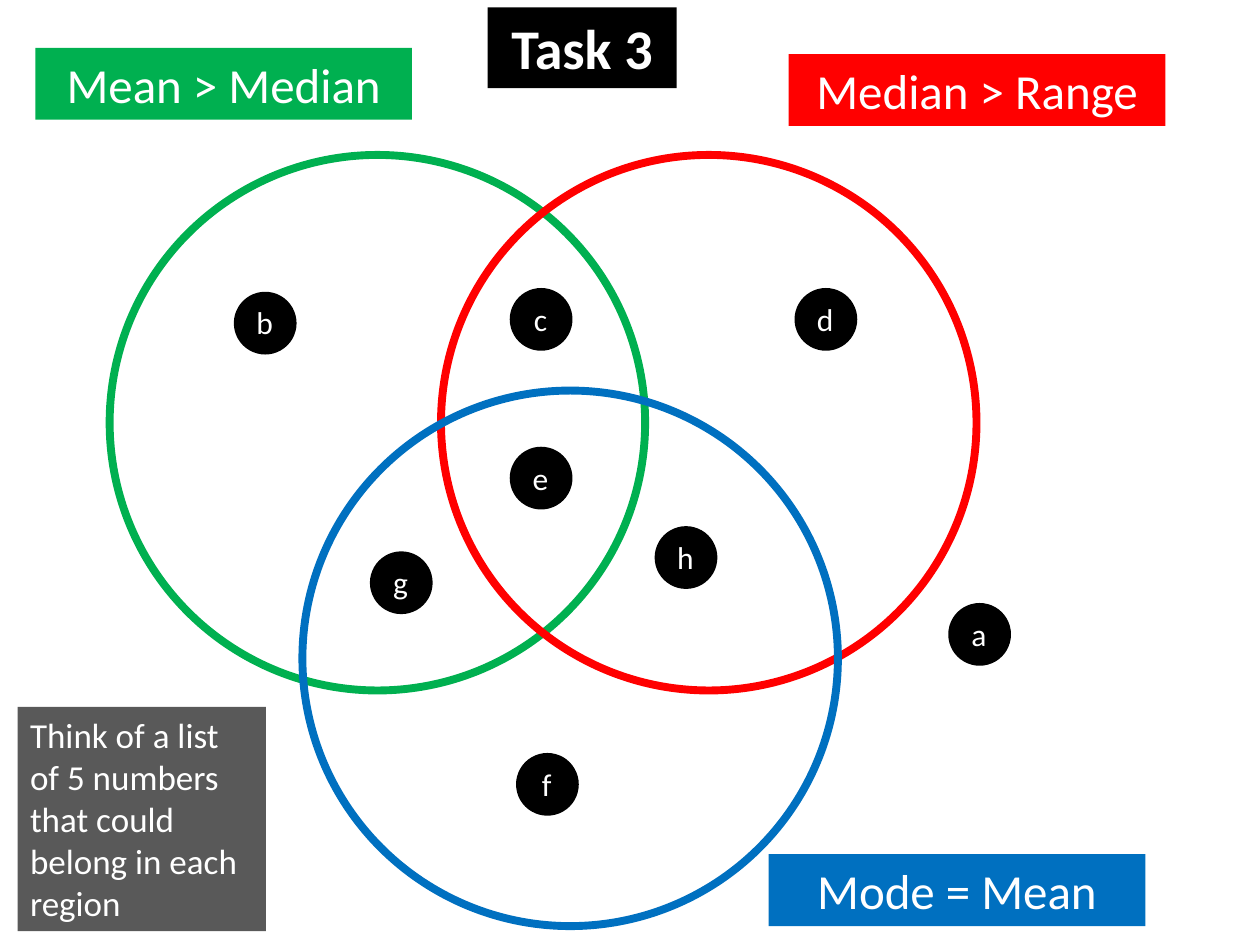
from pptx import Presentation
from pptx.dml.color import RGBColor
from pptx.enum import shapes, text as t
from pptx.util import Inches, Pt

COLORS = {
    "green": "00B050",
    "red": "FF0000",
    "blue": "0070C0",
    "black": "000000",
    "grey": "595959",
    "white": "FFFFFF",
}


def color(name):
    return RGBColor.from_string(COLORS[name])


def add_label(text, left, top, width, height, size, fill=None, bold=False,
              align=t.PP_ALIGN.CENTER):
    box = slide.shapes.add_textbox(
        Inches(left), Inches(top), Inches(width), Inches(height))
    if fill:
        box.fill.solid()
        box.fill.fore_color.rgb = color(fill)
    frame = box.text_frame
    frame.word_wrap = True
    frame.auto_size = t.MSO_AUTO_SIZE.SHAPE_TO_FIT_TEXT
    paragraph = frame.paragraphs[0]
    paragraph.alignment = align
    run = paragraph.add_run()
    run.text = text
    run.font.name = "Calibri"
    run.font.size = Pt(size)
    run.font.bold = bold
    run.font.color.rgb = color("white")


presentation = Presentation()
presentation.slide_width = Inches(10)
presentation.slide_height = Inches(7.5)
slide = presentation.slides.add_slide(presentation.slide_layouts[6])

# Set names
for text, left, top, fill in [
    ("Median > Range", 6.26, 0.43, "red"),
    ("Mode = Mean", 6.1, 6.78, "blue"),
    ("Mean > Median", 0.28, 0.38, "green"),
]:
    add_label(text, left, top, 2.99, 0.57, 28, fill)

# Venn circles
DIAMETER = 4.25
for left, top, line in [
    (0.87, 1.23, "green"),
    (3.5, 1.23, "red"),
    (2.4, 3.1, "blue"),
]:
    circle = slide.shapes.add_shape(
        shapes.MSO_SHAPE.OVAL, Inches(left), Inches(top),
        Inches(DIAMETER), Inches(DIAMETER))
    circle.shadow.inherit = False
    circle.fill.background()
    circle.line.color.rgb = color(line)
    circle.line.width = Pt(4.5)

# Region markers: a dot with its letter on top
DOT = 0.47
for letter, left, top in [
    ("b", 1.87, 2.33),
    ("d", 6.32, 2.3),
    ("f", 4.11, 5.99),
    ("c", 4.06, 2.3),
    ("h", 5.21, 4.19),
    ("g", 2.95, 4.39),
    ("e", 4.06, 3.56),
    ("a", 7.54, 4.8),
]:
    dot = slide.shapes.add_shape(
        shapes.MSO_SHAPE.OVAL, Inches(left), Inches(top),
        Inches(DOT), Inches(DOT))
    dot.shadow.inherit = False
    dot.fill.solid()
    dot.fill.fore_color.rgb = color("black")
    dot.line.color.rgb = color("black")
    dot.line.width = Pt(2)
    add_label(letter, left + 0.05, top + 0.03, 0.36, 0.4, 18)

# Instruction and title
add_label("Think of a list of 5 numbers that could belong in each region",
          0.14, 5.61, 1.97, 1.78, 20, "grey", align=t.PP_ALIGN.LEFT)
add_label("Task 3", 3.87, 0.06, 1.5, 0.64, 32, "black", bold=True)

presentation.save("out.pptx")
